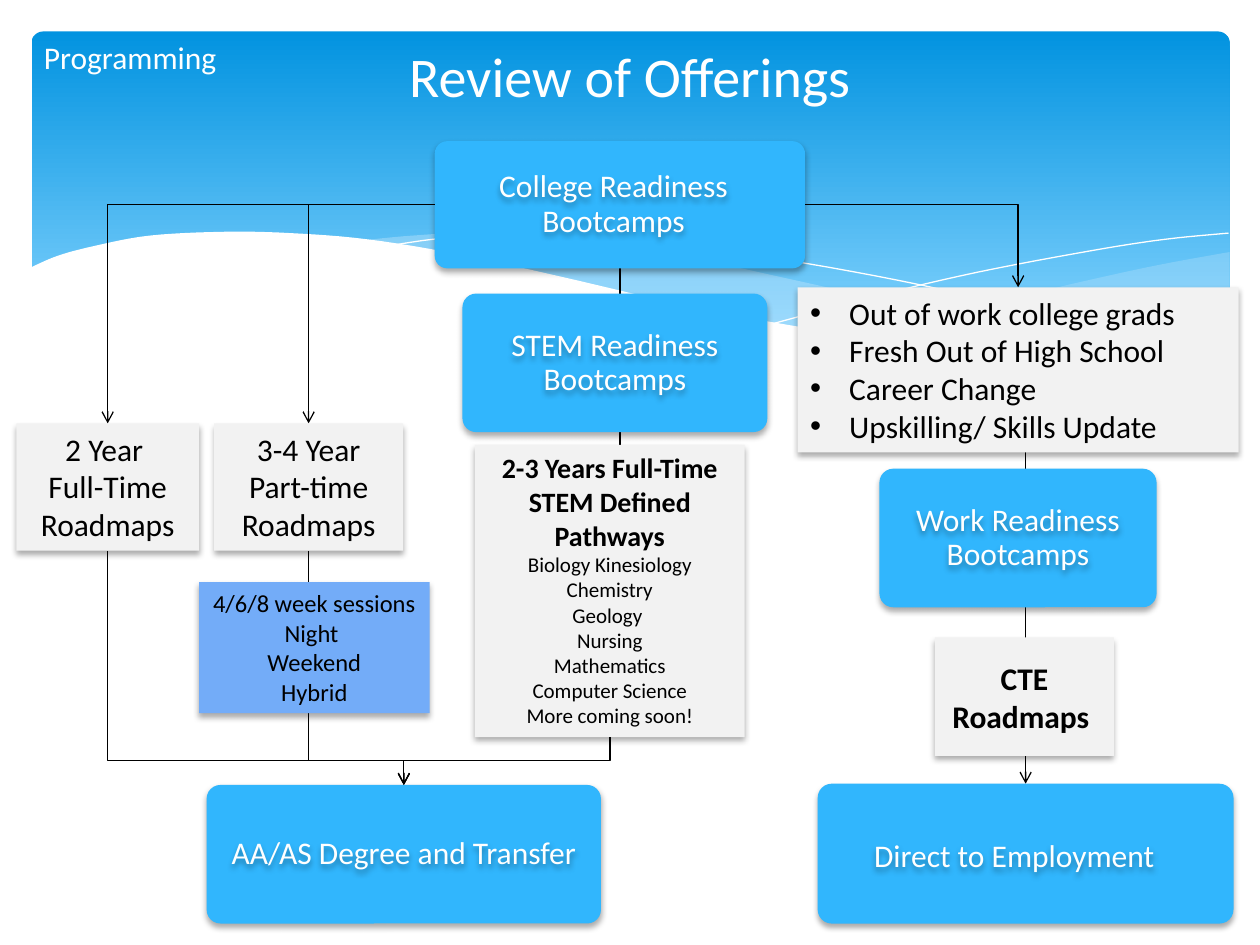
from collections import namedtuple

from lxml.etree import SubElement
from pptx import Presentation
from pptx.dml.color import RGBColor
from pptx.enum.shapes import MSO_CONNECTOR, MSO_SHAPE
from pptx.enum.text import MSO_ANCHOR, MSO_AUTO_SIZE, PP_ALIGN
from pptx.oxml.ns import qn
from pptx.util import Inches, Pt

WHITE = RGBColor(0xFF, 0xFF, 0xFF)
BLACK = RGBColor(0, 0, 0)
SKY_DARK = RGBColor(0x02, 0x93, 0xE0)
SKY_LIGHT = RGBColor(0x83, 0xD3, 0xFE)
MIST = RGBColor(0xC6, 0xE7, 0xFC)
BRIGHT_BLUE = RGBColor(0x31, 0xB6, 0xFD)
SESSION_BLUE = RGBColor(0x73, 0xAC, 0xF8)
GREY = RGBColor(0xF2, 0xF2, 0xF2)
FONT = "Calibri"
COLUMNS, ROWS = 100, 75  # the slide's grid
CELL = Inches(0.1)


def grid(cells):
    return round(cells * CELL)


class Box(namedtuple("Box", "left top width height")):
    """A rectangle in grid cells."""

    def inner(self, left, top, width, height):
        return Box(self.left + left, self.top + top, width, height)

    def edge(self, across, down):
        return self.left + across * self.width, self.top + down * self.height

    def emu(self):
        return [grid(cells) for cells in self]


# --- shared drawing helpers ---

def write(frame, lines, size, color=BLACK, align=PP_ALIGN.CENTER, anchor=MSO_ANCHOR.TOP,
          bold=False):
    frame.word_wrap = True
    frame.auto_size = MSO_AUTO_SIZE.NONE
    frame.vertical_anchor = anchor
    frame.text = "\n".join(lines)
    for paragraph in frame.paragraphs:
        paragraph.alignment = align
        paragraph.space_before = Pt(0)
        for run in paragraph.runs:
            font = run.font
            font.name, font.size, font.bold = FONT, Pt(size), bold
            font.color.rgb = color


def soft_shadow(shape):
    shape.shadow.inherit = False
    effects = shape._element.spPr.find(qn("a:effectLst"))
    outer = SubElement(effects, qn("a:outerShdw"), blurRad=str(Pt(3.5)), dist=str(Pt(2.2)),
                       dir="5400000", algn="ctr", rotWithShape="0")
    black = SubElement(outer, qn("a:srgbClr"), val="000000")
    SubElement(black, qn("a:alpha"), val="32000")


def card(slide, box, lines, size=18, fill=GREY, **style):
    shape = slide.shapes.add_shape(MSO_SHAPE.RECTANGLE, *box.emu())
    shape.fill.solid()
    shape.fill.fore_color.rgb = fill
    shape.line.fill.background()
    soft_shadow(shape)
    write(shape.text_frame, lines, size, **style)
    return shape


def milestone(slide, box, label, shift=(0, 0)):
    shape = slide.shapes.add_shape(MSO_SHAPE.ROUNDED_RECTANGLE, *box.emu())
    shape.adjustments[0] = 0.1
    shape.fill.solid()
    shape.fill.fore_color.rgb = BRIGHT_BLUE
    shape.line.fill.background()
    soft_shadow(shape)
    inset = box.inner(0.2 + shift[0], 0.3 + shift[1], box.width - 0.4, box.height - 0.6)
    caption = slide.shapes.add_textbox(*inset.emu())
    soft_shadow(caption)
    frame = caption.text_frame
    write(frame, [label], 18, WHITE, anchor=MSO_ANCHOR.MIDDLE)
    frame.margin_left = frame.margin_right = Inches(0.11)
    frame.margin_top = frame.margin_bottom = Inches(0.11)
    frame.paragraphs[0].line_spacing = 0.9


def arrow(slide, start, end, kind=MSO_CONNECTOR.STRAIGHT):
    line = slide.shapes.add_connector(kind, *(grid(cells) for cells in (*start, *end)))
    line.line.color.rgb = BLACK
    line.line.width = Pt(0.75)
    SubElement(line.line._get_or_add_ln(), qn("a:tailEnd"), type="arrow")
    SubElement(line._element.spPr, qn("a:effectLst"))
    return line


def corner_arrow(slide, start, end):
    """Goes sideways first, then down."""
    line = arrow(slide, start, end, MSO_CONNECTOR.ELBOW)
    line._element.spPr.find(qn("a:prstGeom")).set("prst", "bentConnector2")


def merge_arrow(slide, start, end, bend):
    """Goes down to the row of the bend, sideways, and down again."""
    (x1, y1), (x2, y2) = start, end
    middle_x, middle_y = (x1 + x2) / 2, (y1 + y2) / 2
    half_drop, half_run = (y2 - y1) / 2, (x2 - x1) / 2
    line = arrow(slide, (middle_x - half_drop, middle_y + half_run),
                 (middle_x + half_drop, middle_y - half_run), MSO_CONNECTOR.ELBOW)
    properties = line._element.spPr
    properties.find(qn("a:xfrm")).set("rot", "5400000")
    guides = properties.find(qn("a:prstGeom")).find(qn("a:avLst"))
    share = round((bend - y1) / (y2 - y1) * 100000)
    SubElement(guides, qn("a:gd"), name="adj1", fmla=f"val {share}")


def curve(knots, steps=6):
    """Smooth run of points through the knots (Catmull-Rom)."""
    padded = [knots[0], *knots, knots[-1]]
    points = [knots[0]]
    for a, b, c, d in zip(padded, padded[1:], padded[2:], padded[3:]):
        for t in (step / steps for step in range(1, steps + 1)):
            points.append(tuple(
                (2 * q + (r - p) * t + (2 * p - 5 * q + 4 * r - s) * t ** 2
                 + (3 * q - p - 3 * r + s) * t ** 3) / 2
                for p, q, r, s in zip(a, b, c, d)))
    return points


def outline(slide, points, fill=None, opacity=100):
    corners = [(grid(x), grid(y)) for x, y in points]
    builder = slide.shapes.build_freeform(*corners[0], scale=1.0)
    builder.add_line_segments(corners[1:], close=fill is not None)
    shape = builder.convert_to_shape()
    shape.shadow.inherit = False
    if fill is None:
        shape.fill.background()
        shape.line.color.rgb = WHITE
        shape.line.width = Pt(0)
        return
    shape.line.fill.background()
    shape.fill.solid()
    shape.fill.fore_color.rgb = fill
    tint = shape._element.spPr.find(qn("a:solidFill"))[0]
    SubElement(tint, qn("a:alpha"), val=str(opacity * 1000))


# --- regions of the slide ---

def backdrop(slide, box):
    sky = slide.shapes.add_shape(MSO_SHAPE.ROUNDED_RECTANGLE, *box.emu())
    sky.adjustments[0] = 0.034
    sky.shadow.inherit = False
    sky.line.fill.background()
    sky.fill.gradient()
    sky.fill.gradient_angle = 270
    for stop, (position, color) in zip(sky.fill.gradient_stops,
                                       ((0, SKY_DARK), (0.9, SKY_LIGHT))):
        stop.position, stop.color.rgb = position, color

    # translucent ribbons, thin crests and the white foreground wave
    outline(slide, curve([(97.6, 20), (92.1, 21), (86.1, 22.3), (77.9, 24.2), (66.1, 26.5)])
            + curve([(66.1, 26.5), (71.9, 27.2), (78.1, 27.7), (84.4, 27.7), (89.7, 27),
                     (93.5, 26.2), (97.6, 24.7)]), MIST, 29)
    outline(slide, curve([(89.3, 27.3), (77.5, 25.4), (62.9, 22.2), (54.1, 20.3),
                          (46.5, 19.1), (38, 18.5), (32.8, 18.7), (28.6, 19.1)])
            + curve([(28.6, 19.1), (36.2, 20.3), (44.9, 22.2), (56.6, 24.8), (66.5, 26.6),
                     (74.8, 27.6), (81.8, 27.8), (89.3, 27.3)]), MIST, 40)
    outline(slide, curve([(30.9, 19.5), (35.3, 18.9), (41.6, 18.7), (48.9, 19),
                          (58.2, 20), (69.5, 21.9), (79.5, 24.1), (90.7, 27.2)]))
    outline(slide, curve([(61.3, 25.7), (69.5, 23.5), (77.6, 21.6), (86.6, 19.9),
                          (92.4, 19), (97.5, 18.5)]))
    outline(slide, curve([(97.7, 24.6), (92, 26.5), (86.3, 27.4), (80.9, 27.7), (72.6, 27.2),
                          (62.6, 25.8), (52.9, 23.9), (44.7, 22), (36.5, 20.2), (29.2, 19),
                          (23, 18.5), (17.7, 18.4), (11.9, 18.7), (7.6, 19.5), (4.6, 20.3),
                          (2.3, 21.3)]) + [(2.3, 32.9), (97.7, 32.9)], WHITE)


def header(slide, box):
    title = slide.shapes.title
    title.left, title.top, title.width, title.height = box.emu()
    write(title.text_frame, ["Review of Offerings"], 32, WHITE, anchor=MSO_ANCHOR.MIDDLE)
    label = slide.shapes.add_textbox(*box.inner(2.5, 0.6, 18.7, 4).emu())
    write(label.text_frame, ["Programming"], 18, WHITE, align=PP_ALIGN.LEFT)


def degree_routes(slide, box, college, pathways):
    full_time = box.inner(0, 0, 14.5, 10.1)
    half_time = box.inner(15.7, 0, 15, 10.1)
    sessions = box.inner(14.5, 12.6, 18.3, 10.4)
    degree = box.inner(15.1, 28.7, 31.3, 11)
    for route in (full_time, half_time):
        corner_arrow(slide, college.edge(0, 0.5), route.edge(0.5, 0))
    for route in (full_time, half_time, pathways):
        merge_arrow(slide, route.edge(0.5, 1), degree.edge(0.5, 0), degree.top - 1.95)
    card(slide, full_time, ["2 Year \vFull-Time Roadmaps"])
    card(slide, half_time, ["3-4 Year Part-time Roadmaps"])
    card(slide, sessions, ["4/6/8 week sessions\vNight ", "Weekend", "Hybrid"], 14, SESSION_BLUE)
    milestone(slide, degree, "AA/AS Degree and Transfer")


def stem_route(slide, box):
    college = box.inner(0, 0, 29.4, 10.1)
    stem = box.inner(2.2, 12.1, 24.2, 11)
    pathways = box.inner(3.2, 24.1, 21.4, 23.2)
    start_x, start_y = college.edge(0.5, 1)
    arrow(slide, (start_x, start_y), (start_x, pathways.top + 17.7))
    offers = card(slide, pathways, [
        "2-3 Years Full-Time", "STEM Defined Pathways",
        "Biology Kinesiology\vChemistry\vGeology \vNursing\vMathematics\vComputer Science",
        "More coming soon!"], 12)
    for heading in offers.text_frame.paragraphs[:2]:
        for run in heading.runs:
            run.font.size, run.font.bold = Pt(16), True
    milestone(slide, college, "College Readiness Bootcamps", shift=(-0.5, 0))
    milestone(slide, stem, "STEM Readiness Bootcamps")
    return college, pathways


def employment_route(slide, box, college):
    audience = box.inner(0, 0, 35, 13.1)
    work = box.inner(6.5, 14.4, 22, 11)
    roadmaps = box.inner(10.9, 27.8, 14.2, 9.4)
    employment = box.inner(1.6, 39.4, 33, 11.1)
    corner_arrow(slide, college.edge(1, 0.5), audience.edge(0.5, 0))
    end_x, end_y = employment.edge(0.5, 0)
    arrow(slide, (end_x, audience.top + 11.6), (end_x, end_y))

    # bulleted list of who the route is for
    groups = slide.placeholders[1]
    groups.left, groups.top, groups.width, groups.height = audience.emu()
    groups.fill.solid()
    groups.fill.fore_color.rgb = GREY
    soft_shadow(groups)
    write(groups.text_frame, ["Out of work college grads", "Fresh Out of High School",
                              "Career Change", "Upskilling/ Skills Update"],
          18, align=PP_ALIGN.LEFT)
    for paragraph in groups.text_frame.paragraphs:
        indents = paragraph._p.get_or_add_pPr()
        indents.set("marL", str(Inches(0.31)))
        indents.set("indent", str(-Inches(0.31)))
    slide.shapes._spTree.append(groups._element)  # in front of the arrow

    card(slide, roadmaps, ["CTE", "Roadmaps "], anchor=MSO_ANCHOR.MIDDLE, bold=True)
    milestone(slide, work, "Work Readiness Bootcamps")
    milestone(slide, employment, "Direct to Employment", shift=(-0.9, 0.3))


def main():
    deck = Presentation()
    deck.slide_width, deck.slide_height = grid(COLUMNS), grid(ROWS)
    slide = deck.slides.add_slide(deck.slide_layouts[1])
    backdrop(slide, Box(2.5, 2.5, 95.1, 27))
    slide.shapes._spTree.append(slide.shapes.title._element)  # in front of the backdrop
    header(slide, Box(0, 1.9, COLUMNS, 8.1))
    college, pathways = stem_route(slide, Box(34.5, 11.2, 29.4, 47.3))
    degree_routes(slide, Box(1.3, 33.6, 46.4, 39.7), college, pathways)
    employment_route(slide, Box(63.3, 22.8, 35, 50.5), college)
    deck.save("out.pptx")


if __name__ == "__main__":
    main()
